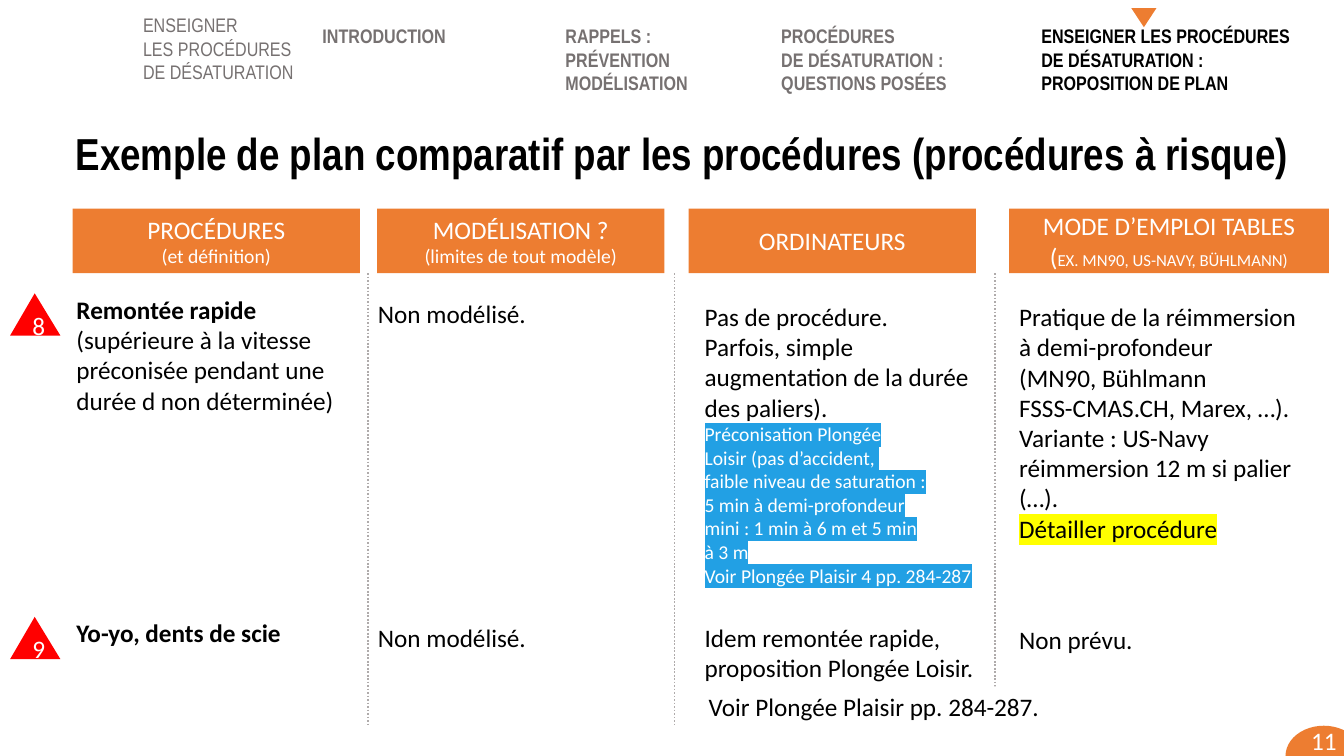
"""Build the slide comparing risky ascent procedures across models, computers and tables."""
from copy import deepcopy

from lxml import etree
from pptx import Presentation, util as u
from pptx.dml.color import RGBColor
from pptx.enum import dml, shapes, text
from pptx.oxml.ns import qn

ORANGE = RGBColor(0xED, 0x7D, 0x31)
RED = RGBColor(0xFF, 0x00, 0x00)
BLACK = RGBColor(0x00, 0x00, 0x00)
WHITE = RGBColor(0xFF, 0xFF, 0xFF)
GREY = RGBColor(0x76, 0x71, 0x71)
LINE_GREY = RGBColor(0xAF, 0xAB, 0xAB)
YELLOW = RGBColor(0xFF, 0xFF, 0x00)
BLUE = RGBColor(0x22, 0xA0, 0xE4)
LEFT, CENTER = text.PP_ALIGN.LEFT, text.PP_ALIGN.CENTER

presentation = Presentation()
presentation.slide_width, presentation.slide_height = u.Inches(13.33), u.Inches(7.5)
slide = presentation.slides.add_slide(presentation.slide_layouts[5])


def write(shape, paragraphs, align=LEFT, **base):
    """Write paragraphs, each a list of (words, style changes) runs."""
    frame = shape.text_frame
    for index, runs in enumerate(paragraphs):
        paragraph = frame.add_paragraph() if index else frame.paragraphs[0]
        paragraph.alignment = align
        for words, changes in runs:
            style = {"size": 18, "font": "Calibri", "color": BLACK, "bold": False, **base, **changes}
            for number, line in enumerate(words.split("\n")):
                if number:
                    paragraph.add_line_break()
                line_break = paragraph._p[-1] if number else None
                if line or not number:
                    run = paragraph.add_run()
                    run.text = line
                    run.font.size = u.Pt(style["size"])
                    run.font.name = style["font"]
                    run.font.bold = style["bold"]
                    run.font.color.rgb = style["color"]
                    if "highlight" in style:
                        highlight = etree.Element(qn("a:highlight"))
                        etree.SubElement(highlight, qn("a:srgbClr"), val=str(style["highlight"]))
                        run._r.rPr.find(qn("a:solidFill")).addnext(highlight)
                if line_break is not None:
                    line_break.append(deepcopy(run._r.rPr))


def add_box(kind, left, top, width, height, fill=None):
    """Add a filled preset shape, or a non-wrapping text box when kind is None."""
    area = [u.Inches(length) for length in (left, top, width, height)]
    if kind is None:
        shape = slide.shapes.add_textbox(*area)
        shape.text_frame.word_wrap = False
        shape.text_frame.auto_size = text.MSO_AUTO_SIZE.SHAPE_TO_FIT_TEXT
        return shape
    shape = slide.shapes.add_shape(kind, *area)
    shape.shadow.inherit = False
    shape.fill.solid()
    shape.fill.fore_color.rgb = fill
    shape.line.fill.background()
    return shape


title = slide.shapes.title
title.left, title.top, title.width, title.height = [u.Inches(n) for n in (0.65, 1.2, 12.33, 0.64)]
title.text_frame.vertical_anchor = text.MSO_ANCHOR.TOP
title.text_frame.word_wrap = True
title.text_frame.auto_size = text.MSO_AUTO_SIZE.NONE
write(title, [[("Exemple de plan comparatif par les procédures (procédures à risque)", {})]],
      size=32, font="Arial Narrow", bold=True)

page_badge = add_box(shapes.MSO_SHAPE.OVAL, 12.75, 7.2, 0.76, 0.6, ORANGE)
page_badge.text_frame.margin_bottom = u.Inches(0.35)
write(page_badge, [[("11", {})]], CENTER, color=WHITE)

HEADER_TOP, HEADER_HEIGHT = 2.07, 0.64
SMALL = {"size": 14}
headers = [
    (0.72, 2.85, [[("PROCÉDURES", {})], [("(et définition)", SMALL)]]),
    (3.74, 2.85, [[("MODÉLISATION ?", {})], [("(limites de tout modèle)", SMALL)]]),
    (6.83, 2.85, [[("ORDINATEURS", {})]]),
    (10.01, 3.17, [[("MODE D’EMPLOI TABLES", {})],
                   [("(", {}), ("EX. MN90, US-NAVY, BÜHLMANN)", {"size": 12})]]),
]
for left, width, paragraphs in headers:
    header = add_box(shapes.MSO_SHAPE.RECTANGLE, left, HEADER_TOP, width, HEADER_HEIGHT, ORANGE)
    write(header, paragraphs, CENTER, color=WHITE)

for x in (3.65, 6.69, 9.87):
    divider = slide.shapes.add_connector(
        shapes.MSO_CONNECTOR.STRAIGHT, u.Inches(x), u.Inches(HEADER_TOP + HEADER_HEIGHT),
        u.Inches(x), u.Inches(7.2))
    divider.line.color.rgb = LINE_GREY
    divider.line.width = u.Pt(1.25)
    divider.line.dash_style = dml.MSO_LINE.ROUND_DOT
    etree.SubElement(divider._element.spPr, qn("a:effectLst"))

for number, top in (("8", 2.91), ("9", 6.12)):
    warning = add_box(shapes.MSO_SHAPE.ISOSCELES_TRIANGLE, 0.1, top, 0.5, 0.42, RED)
    warning.adjustments[0] = 0.489
    write(warning, [[(number, {})]], CENTER, color=WHITE)
    write(add_box(None, 3.65, top, 1.69, 0.4), [[("Non modélisé.", {})]])

BOLD = {"bold": True}
ADVICE = {"size": 14, "color": WHITE, "highlight": BLUE}
cells = [
    (0.66, 2.87, 2.79, 1.31, [
        [("Remontée rapide", BOLD),
         ("\n(supérieure à la vitesse\npréconisée pendant une\ndurée d non déterminée)", {})]]),
    (6.89, 2.94, 2.86, 2.96, [
        [("Pas de procédure.", {})],
        [("Parfois, simple\naugmentation de la durée\ndes paliers).", {})],
        [("Préconisation Plongée\nLoisir (pas d’accident, \nfaible niveau de saturation :\n"
          "5 min à demi-profondeur\nmini : 1 min à 6 m et 5 min\nà 3 m", ADVICE)],
        [("Voir Plongée Plaisir 4 pp. 284-287", ADVICE)]]),
    (10.01, 2.94, 2.98, 2.52, [
        [("Pratique de la réimmersion\nà demi-profondeur \n(MN90, Bühlmann\n"
          "FSSS-CMAS.CH, Marex, …).", {})],
        [("Variante : US-Navy\nréimmersion 12 m si palier\n(…).", {})],
        [("Détailler procédure", {"highlight": YELLOW})]]),
    (0.66, 6.08, 2.24, 0.4, [[("Yo-yo, dents de scie", BOLD)]]),
    (6.89, 6.12, 2.97, 0.71, [
        [("Idem remontée rapide,", {})], [("proposition Plongée Loisir.", {})]]),
    (10.01, 6.14, 1.34, 0.4, [[("Non prévu.", {})]]),
]
for left, top, width, height, paragraphs in cells:
    write(add_box(None, left, top, width, height), paragraphs)

sections = [
    (1.32, 0.08, 1.72, 0.81, GREY, False, ["ENSEIGNER", "LES PROCÉDURES", "DE DÉSATURATION"]),
    (3.1, 0.19, 1.68, 0.34, GREY, True, ["INTRODUCTION"]),
    (5.51, 0.19, 1.42, 0.81, GREY, True, ["RAPPELS :", "PRÉVENTION", "MODÉLISATION"]),
    (7.65, 0.19, 1.85, 0.81, GREY, True, ["PROCÉDURES", "DE DÉSATURATION :", "QUESTIONS POSÉES"]),
    (10.23, 0.19, 2.68, 0.81, BLACK, True,
     ["ENSEIGNER LES PROCÉDURES", "DE DÉSATURATION :", "PROPOSITION DE PLAN"]),
]
for left, top, width, height, color, bold, lines in sections:
    section = add_box(None, left, top, width, height)
    section.text_frame.word_wrap = len(lines) == 1
    write(section, [[(line, {})] for line in lines],
          size=14, font="Arial Narrow", color=color, bold=bold)

section_marker = add_box(shapes.MSO_SHAPE.ISOSCELES_TRIANGLE, 11.22, 0.08, 0.25, 0.19, ORANGE)
section_marker.rotation = 180

reference = add_box(shapes.MSO_SHAPE.RECTANGLE, 6.93, 6.81, 3.52, 0.4, WHITE)
reference.text_frame.word_wrap = False
write(reference, [[("Voir Plongée Plaisir pp. 284-287.", {})]])

presentation.save("out.pptx")
